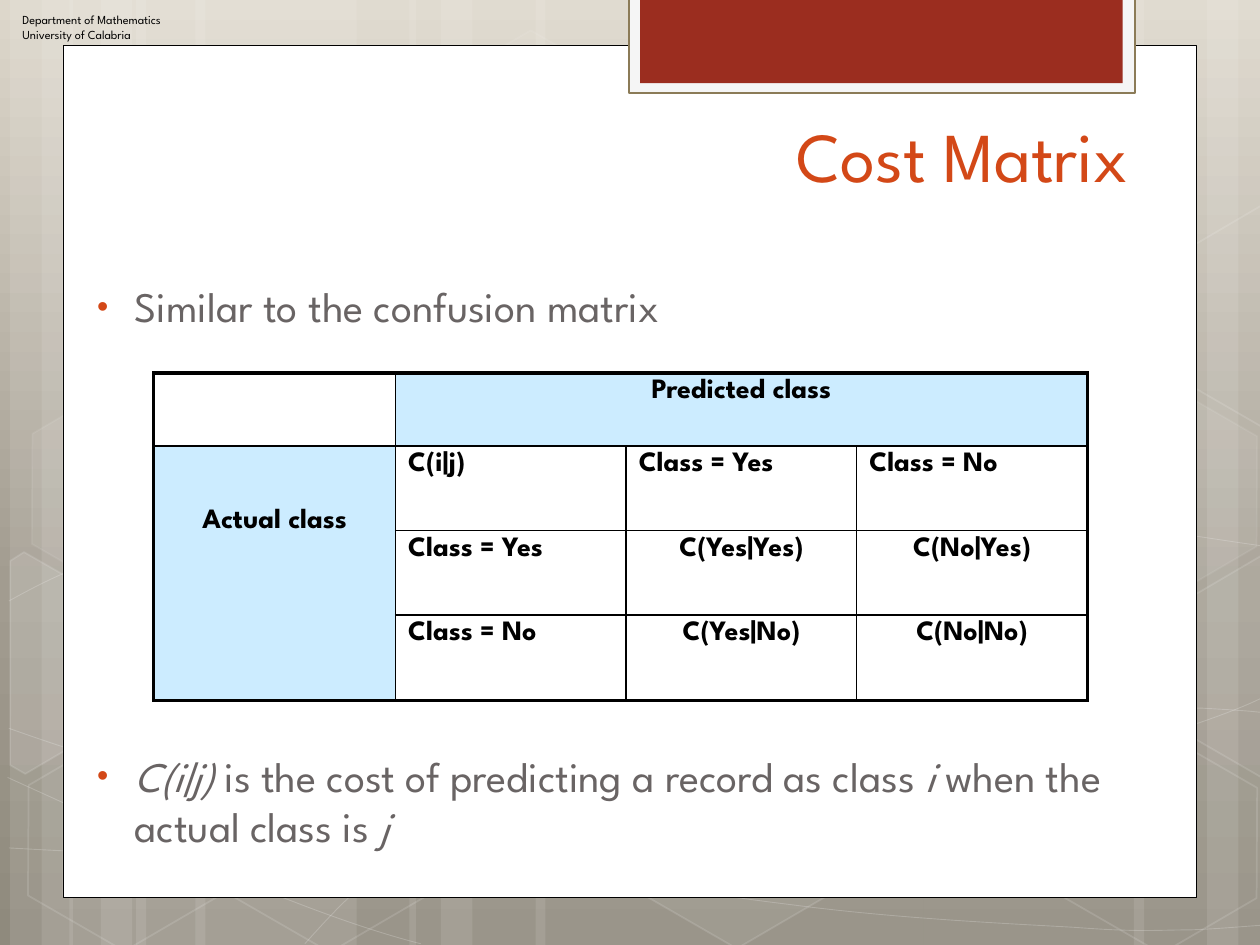
from math import cos, radians, sin

from lxml import etree
from pptx import Presentation
from pptx.dml.color import RGBColor
from pptx.enum.shapes import MSO_SHAPE
from pptx.enum.text import MSO_ANCHOR, MSO_AUTO_SIZE, PP_ALIGN
from pptx.oxml import parse_xml
from pptx.oxml.ns import nsdecls, qn
from pptx.util import Inches, Pt

RECT, HEXAGON = MSO_SHAPE.RECTANGLE, MSO_SHAPE.HEXAGON
TOP, NO_FIT = MSO_ANCHOR.TOP, MSO_AUTO_SIZE.NONE
LEFT, CENTER, RIGHT = PP_ALIGN.LEFT, PP_ALIGN.CENTER, PP_ALIGN.RIGHT
FONT = "League Spartan"
C = {"white": "FFFFFF", "black": "000000", "accent": "D34817", "gray": "696464",
     "tab": "9B2D1F", "tab_edge": "F5F5F5", "tab_line": "8B7B57", "header": "CCECFF"}
GRADIENT = [(0, "DDD7CB"), (62, "A29C90"), (100, "8F8A7D")]

STRIPES = [(1.08, 1.75), (0.08, 0.5), (0.33, 0.83), (1.55, 1.75), (0.55, 0.5), (0.8, 0.83),
           (7.33, 1.75), (9.58, 0.5), (9, 0.83), (4.25, 3.08), (3.25, 0.5), (3.5, 0.83)]
WAVES = [
    [(0.07, 6.73), (0.61, 6.76), (1.15, 6.79), (1.9, 6.78), (2.65, 6.77), (3.58, 6.75),
     (4.58, 6.65), (5.58, 6.55), (7, 6.36), (7.92, 6.17), (8.83, 5.98), (9.77, 5.68),
     (10.07, 5.51)],
    [(0.07, 4.77), (0.36, 4.61), (0.65, 4.46), (1.21, 4.31), (1.78, 4.16), (2.59, 3.94),
     (3.47, 3.87), (4.36, 3.8), (5.44, 3.79), (6.54, 3.87), (7.64, 3.95), (9.47, 4.26),
     (10.07, 4.34)],
    [(0.06, 6.17), (1.27, 6.72), (2.47, 7.27), (3.34, 7.49)],
    [(0.07, 5.78), (0.38, 5.89), (0.7, 6), (1.28, 6.16), (1.86, 6.31), (2.73, 6.56),
     (3.57, 6.73), (4.4, 6.9), (5.45, 7.08), (6.28, 7.18), (7.11, 7.29), (8, 7.33),
     (8.53, 7.36), (9.05, 7.4), (9.19, 7.38), (9.45, 7.38), (9.71, 7.37), (9.89, 7.35),
     (10.07, 7.34)],
    [(2.42, 7.49), (2.6, 7.29), (2.78, 7.09), (3.02, 6.91), (3.26, 6.73), (3.6, 6.53),
     (3.88, 6.39), (4.16, 6.25), (4.33, 6.19), (4.7, 6.09), (5.06, 5.99), (5.73, 5.85),
     (6.08, 5.78), (6.44, 5.71), (6.49, 5.71), (6.8, 5.69), (7.11, 5.66), (7.6, 5.63),
     (7.94, 5.62), (8.29, 5.61), (8.86, 5.62), (8.86, 5.62), (8.86, 5.62), (9.53, 5.62),
     (9.53, 5.62), (9.71, 5.63), (9.88, 5.64), (9.97, 5.65), (10.06, 5.66), (10.03, 5.65),
     (10.06, 5.66)],
]
HEXAGONS = [(3.34, 0.36, 4, 8), (4.97, 5.89, 6, 12), (0.11, 5.91, None, 12),
            (0.14, 3.12, 7, 8), (1.74, 5.92, None, 12), (7.53, 4.53, 10, 12),
            (8.34, 5.93, None, 12), (8.34, 3.14, 7, 8)]
CUT_HEXAGONS = [
    ((0.36, 5.35), 10, [(0.08, 4.45), (0.19, 4.38), (0.96, 4.82), (0.95, 5.7),
                        (0.2, 6.14), (0.08, 6.07)]),
    ((9.85, 5.2), 4, [(9.26, 4.85), (10.01, 4.41), (10.09, 4.46), (10.09, 6.13),
                      (10.02, 6.17), (9.26, 5.73)]),
    ((9.85, 2.41), None, [(9.26, 2.07), (10.01, 1.63), (10.1, 1.68), (10.09, 3.35),
                          (10.02, 3.39), (9.26, 2.95)]),
]
COST_ROWS = [["", "Predicted class", "", ""],
             ["Actual class", "C(i|j)", "Class = Yes", "Class = No"],
             ["", "Class = Yes", "C(Yes|Yes)", "C(No|Yes)"],
             ["", "Class = No", "C(Yes|No)", "C(No|No)"]]
DEFINITION = [("C(i|j)", True), (" is the cost of predicting a record as class ", False),
              ("i", True), (" when the actual class is ", False), ("j", True)]


def write(p, text, size, color, bold=False, italic=False, align=LEFT):
    p.alignment = align
    r = p.add_run()
    r.text = text
    f = r.font
    f.name, f.size, f.bold, f.italic = FONT, Pt(size), bold, italic
    f.color.rgb = RGBColor.from_string(color)


def set_color(fmt, color, alpha, sp):
    fmt.solid()
    fmt.fore_color.rgb = RGBColor.from_string(color)
    if alpha:
        clr = list(sp._element.spPr.iter(qn("a:srgbClr")))[-1]
        etree.SubElement(clr, qn("a:alpha")).set("val", str(alpha * 1000))


def paint(sp, fill=None, alpha=None, line=None, width=1, line_alpha=None):
    sp.shadow.inherit = False
    if fill:
        set_color(sp.fill, fill, alpha, sp)
    else:
        sp.fill.background()
    if line:
        sp.line.width = Pt(width)
        set_color(sp.line.fill, line, line_alpha, sp)
    else:
        sp.line.fill.background()


def add_preset(s, kind, x, y, w, h, **look):
    sp = s.shapes.add_shape(kind, Inches(x), Inches(y), Inches(w), Inches(h))
    paint(sp, **look)
    return sp


def add_outline(s, points, close, **look):
    pts = [(Inches(x), Inches(y)) for x, y in points]
    fb = s.shapes.build_freeform(*pts[0])
    fb.add_line_segments(pts[1:], close=close)
    sp = fb.convert_to_shape()
    paint(sp, **look)
    return sp


def bend(sp):
    lines = list(sp._element.spPr.iter(qn("a:lnTo")))
    for i in range(0, len(lines), 3):
        curve = etree.Element(qn("a:cubicBezTo"))
        lines[i].addprevious(curve)
        for line in lines[i:i + 3]:
            curve.append(line[0])
            line.getparent().remove(line)


def turn_back(points, center, angle):
    cx, cy = center
    c, n = cos(radians(angle)), sin(radians(angle))
    return [(cx + (x - cx) * c + (y - cy) * n, cy - (x - cx) * n + (y - cy) * c)
            for x, y in points]


def add_backdrop(s):
    stops = "".join(f'<a:gs pos="{pos * 1000}"><a:srgbClr val="{color}"/></a:gs>'
                    for pos, color in GRADIENT)
    s.element.cSld.insert(0, parse_xml(
        f'<p:bg {nsdecls("p", "a")}><p:bgPr><a:gradFill><a:gsLst>{stops}</a:gsLst>'
        '<a:lin ang="5400000" scaled="0"/></a:gradFill><a:effectLst/></p:bgPr></p:bg>'))
    for x, w in STRIPES:
        add_preset(s, RECT, x, 0, w, 7.5, fill=C["white"], alpha=10)
    for knots in WAVES:
        bend(add_outline(s, knots, False, line=C["white"], width=0.5, line_alpha=20))
    for x, y, alpha, line_alpha in HEXAGONS:
        sp = add_preset(s, HEXAGON, x, y, 1.75, 1.52, fill=alpha and C["white"], alpha=alpha,
                        line=C["white"], line_alpha=line_alpha)
        sp.adjustments[0] = 0.285
        sp.rotation = 30
    for center, alpha, points in CUT_HEXAGONS:
        sp = add_outline(s, turn_back(points, center, 30), True, fill=alpha and C["white"],
                         alpha=alpha, line=C["white"], line_alpha=12)
        sp.rotation = 30
    add_preset(s, RECT, 0.5, 0.36, 9, 6.76, fill=C["white"], line=C["black"], width=0.5)
    add_preset(s, RECT, 4.99, -0.02, 4.02, 0.76, fill=C["tab_edge"], line=C["tab_line"],
               width=1.25)
    add_preset(s, RECT, 5.08, -0.02, 3.83, 0.68, fill=C["tab"])


def add_affiliation(s):
    tf = s.shapes.add_textbox(Inches(0.08), Inches(0.05), Inches(2.2), Inches(0.34)).text_frame
    tf.word_wrap = True
    write(tf.paragraphs[0], "Department of Mathematics", 7, C["black"])
    write(tf.add_paragraph(), "University of Calabria", 7, C["black"])


def place(sp, x, y, w, h):
    sp.left, sp.top, sp.width, sp.height = Inches(x), Inches(y), Inches(w), Inches(h)
    sp._element.getparent().append(sp._element)
    tf = sp.text_frame
    tf.word_wrap, tf.auto_size, tf.vertical_anchor = True, NO_FIT, TOP
    return tf


def add_bullet(p, runs, space_before):
    pPr = p._p.get_or_add_pPr()
    pPr.set("marL", str(Inches(0.38)))
    pPr.set("indent", str(Inches(-0.3)))
    clr = etree.SubElement(pPr, qn("a:buClr"))
    etree.SubElement(clr, qn("a:srgbClr")).set("val", C["accent"])
    etree.SubElement(pPr, qn("a:buSzPct")).set("val", "76000")
    etree.SubElement(pPr, qn("a:buFont")).set("typeface", "Arial")
    etree.SubElement(pPr, qn("a:buChar")).set("char", "•")
    p.space_before = Pt(space_before)
    for text, italic in runs:
        write(p, text, 24, C["gray"], italic=italic)


def set_borders(cell, widths):
    tcPr = cell._tc.get_or_add_tcPr()
    for i, (side, width) in enumerate(zip("LRTB", widths)):
        tcPr.insert(i, parse_xml(
            f'<a:ln{side} {nsdecls("a")} w="{Pt(width)}"><a:solidFill>'
            f'<a:srgbClr val="{C["black"]}"/></a:solidFill></a:ln{side}>'))


def add_cost_table(s):
    table = s.shapes.add_table(4, 4, Inches(1.22), Inches(2.96), Inches(7.4),
                               Inches(2.6)).table
    table.first_row = table.horz_banding = False
    for col, w in zip(table.columns, (1.92, 1.83, 1.83, 1.83)):
        col.width = Inches(w)
    for row, h in zip(table.rows, (0.58, 0.67, 0.67, 0.68)):
        row.height = Inches(h)
    table.cell(0, 1).merge(table.cell(0, 3))
    table.cell(1, 0).merge(table.cell(3, 0))
    for i, texts in enumerate(COST_ROWS):
        for j, text in enumerate(texts):
            cell = table.cell(i, j)
            last_row = i + cell.span_height == 4 or i == 3
            last_col = j + cell.span_width == 4 or j == 3
            header = (i == 0) != (j == 0)
            if header:
                cell.fill.solid()
                cell.fill.fore_color.rgb = RGBColor.from_string(C["header"])
            else:
                cell.fill.background()
            set_borders(cell, [2.25 if outer else 1
                               for outer in (j == 0, last_col, i == 0, last_row)])
            cell.margin_top = Inches(0.5 if text == "Actual class" else 0.05)
            if text:
                centered = header or (i > 1 and j > 1)
                write(cell.text_frame.paragraphs[0], text, 16, C["black"], bold=True,
                      align=CENTER if centered else LEFT)


def main():
    prs = Presentation()
    prs.slide_width, prs.slide_height = Inches(10), Inches(7.5)
    s = prs.slides.add_slide(prs.slide_layouts[1])
    add_backdrop(s)
    add_affiliation(s)
    tf = place(s.shapes.title, 1.38, 0.84, 7.68, 1.25)
    write(tf.paragraphs[0], "Cost Matrix", 40, C["accent"], align=RIGHT)
    tf = place(s.placeholders[1], 0.59, 2.18, 8.74, 4.88)
    add_bullet(tf.paragraphs[0], [("Similar to the confusion matrix", False)], 0)
    add_bullet(tf.add_paragraph(), DEFINITION, 239.5)
    add_cost_table(s)
    prs.save("out.pptx")


if __name__ == "__main__":
    main()
